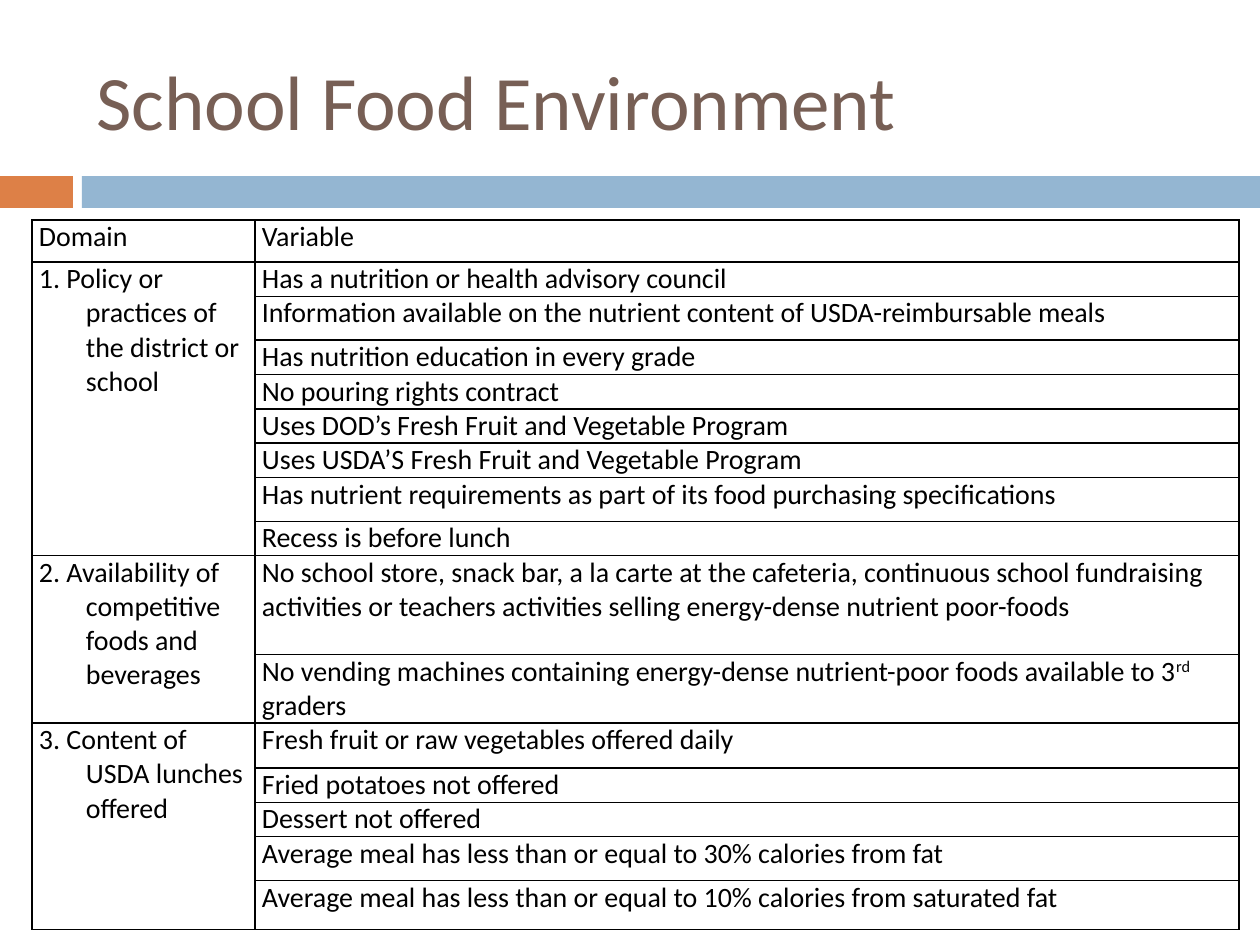
import pptx
import pptx.dml.color
import pptx.enum.shapes
import pptx.enum.text
import pptx.oxml
import pptx.oxml.ns
import pptx.util

ORANGE = pptx.dml.color.RGBColor(0xDD, 0x80, 0x47)
BLUE = pptx.dml.color.RGBColor(0x94, 0xB6, 0xD2)
BROWN = pptx.dml.color.RGBColor(0x77, 0x5F, 0x55)
BLACK = pptx.dml.color.RGBColor(0, 0, 0)
FONT = "Calibri"
SUPERSCRIPT = "30000"
LINE, TALL = 34, 44

HEADER = ("Domain", "Variable")
HEADER_HEIGHT = 42
DOMAINS = [
    ("1. Policy or practices of the district or school", [
        ("Has a nutrition or health advisory council", LINE),
        ("Information available on the nutrient content of USDA-reimbursable meals", TALL),
        ("Has nutrition education in every grade", LINE),
        ("No pouring rights contract", LINE),
        ("Uses DOD’s Fresh Fruit and Vegetable Program", LINE),
        ("Uses USDA’S Fresh Fruit and Vegetable Program", LINE),
        ("Has nutrient requirements as part of its food purchasing specifications", TALL),
        ("Recess is before lunch", LINE),
    ]),
    ("2. Availability of competitive foods and beverages", [
        ("No school store, snack bar, a la carte at the cafeteria, continuous school "
         "fundraising activities or teachers activities selling energy-dense nutrient "
         "poor-foods", 99),
        ("No vending machines containing energy-dense nutrient-poor foods available "
         "to 3^rd^ graders", 2 * LINE),
    ]),
    ("3. Content of USDA lunches offered", [
        ("Fresh fruit or raw vegetables offered daily", 45),
        ("Fried potatoes not offered", LINE),
        ("Dessert not offered", LINE),
        ("Average meal has less than or equal to 30% calories from fat", TALL),
        ("Average meal has less than or equal to 10% calories from saturated fat", 49),
    ]),
]


def px(n):
    return pptx.util.Emu(round(n * 914400 / 126))


def write(tf, text, size=16, color=BLACK, hanging=0):
    p = tf.paragraphs[0]
    p.alignment = pptx.enum.text.PP_ALIGN.LEFT
    if hanging:
        pPr = p._p.get_or_add_pPr()
        pPr.set("marL", str(px(hanging)))
        pPr.set("indent", str(-px(hanging)))
    for i, part in enumerate(text.split("^")):
        r = p.add_run()
        r.text = part
        r.font.name = FONT
        r.font.size = pptx.util.Pt(size)
        r.font.color.rgb = color
        if i % 2:
            r._r.get_or_add_rPr().set("baseline", SUPERSCRIPT)


def add_bar(s, left, width, color):
    sp = s.shapes.add_shape(pptx.enum.shapes.MSO_SHAPE.RECTANGLE,
                            px(left), px(176), px(width), px(32))
    sp.shadow.inherit = False
    sp.fill.solid()
    sp.fill.fore_color.rgb = color
    sp.line.fill.background()


def add_title(s, text):
    sp = s.shapes.title
    sp.left, sp.top, sp.width, sp.height = px(84), px(32), px(1124), px(136)
    sp.text_frame.vertical_anchor = pptx.enum.text.MSO_ANCHOR.MIDDLE
    write(sp.text_frame, text, size=44, color=BROWN)


def style_cell(cell):
    cell.margin_left = cell.margin_right = px(7)
    cell.margin_top = cell.margin_bottom = 0
    cell.vertical_anchor = pptx.enum.text.MSO_ANCHOR.TOP
    tcPr = cell._tc.get_or_add_tcPr()
    for side in ("lnL", "lnR", "lnT", "lnB"):
        tcPr.append(pptx.oxml.parse_xml(
            f'<a:{side} {pptx.oxml.ns.nsdecls("a")} w="12700"><a:solidFill>'
            f'<a:srgbClr val="{BLACK}"/></a:solidFill></a:{side}>'))
    cell.fill.background()


def add_domain_table(s):
    heights = [HEADER_HEIGHT] + [h for _, rows in DOMAINS for _, h in rows]
    table = s.shapes.add_table(len(heights), 2, px(32), px(220),
                               px(1207), px(sum(heights))).table
    table.first_row = table.horz_banding = False
    for column, width in zip(table.columns, (223, 984)):
        column.width = px(width)
    for row, height in zip(table.rows, heights):
        row.height = px(height)
    for cell in table.iter_cells():
        style_cell(cell)
    for col, text in enumerate(HEADER):
        write(table.cell(0, col).text_frame, text)
    top = 1
    for domain, rows in DOMAINS:
        first = table.cell(top, 0)
        first.merge(table.cell(top + len(rows) - 1, 0))
        write(first.text_frame, domain, hanging=47)
        for i, (variable, _) in enumerate(rows, top):
            write(table.cell(i, 1).text_frame, variable)
        top += len(rows)


def main():
    prs = pptx.Presentation()
    prs.slide_width, prs.slide_height = px(1260), px(945)
    s = prs.slides.add_slide(prs.slide_layouts[5])
    add_bar(s, 0, 73, ORANGE)
    add_bar(s, 82, 1178, BLUE)
    add_title(s, "School Food Environment")
    add_domain_table(s)
    prs.save("out.pptx")


if __name__ == "__main__":
    main()
